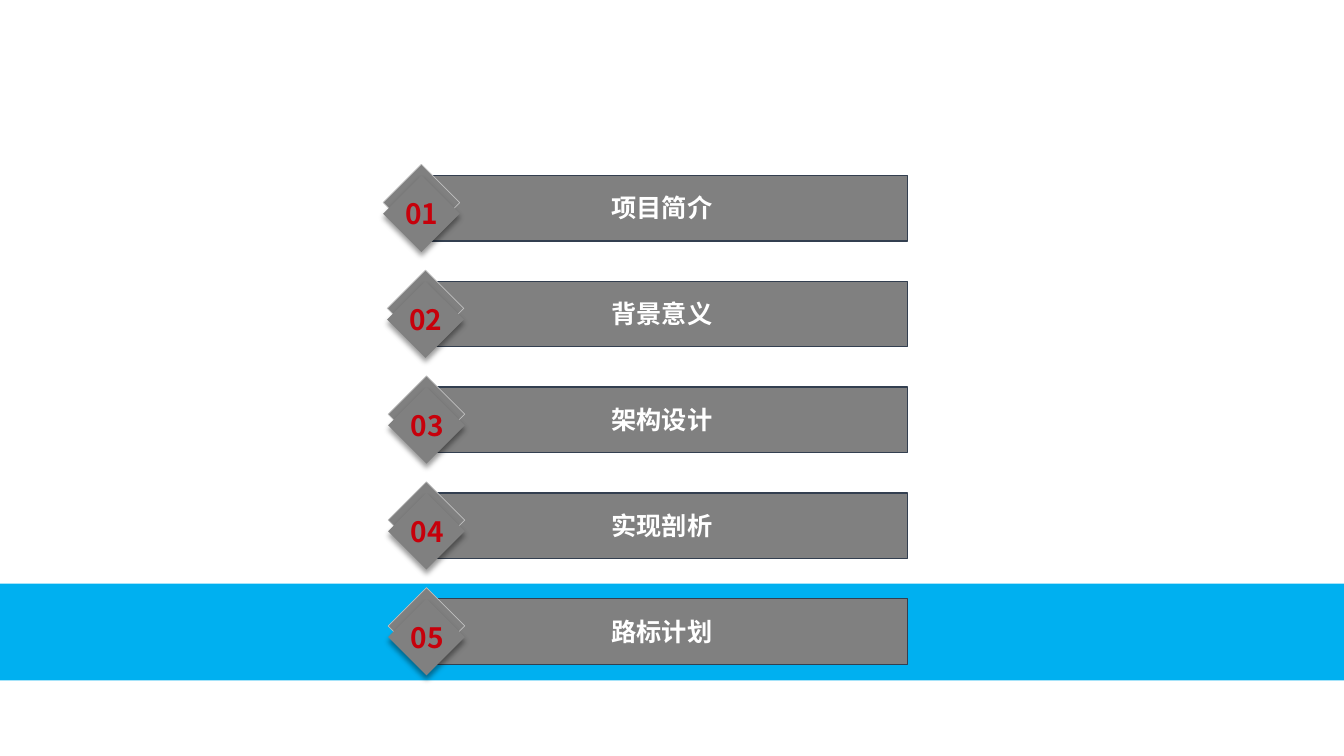
from lxml import etree
from pptx import Presentation
from pptx.dml.color import RGBColor
from pptx.enum import shapes, text
from pptx.oxml import ns
from pptx.util import Inches, Pt

FONT = "Noto Sans CJK SC"
GRAY = RGBColor(0x80, 0x80, 0x80)
LIGHT_GRAY = RGBColor(0xBF, 0xBF, 0xBF)
NAVY = RGBColor(0x33, 0x3F, 0x50)
BLUE = RGBColor(0x00, 0xB0, 0xF0)
RED = RGBColor(0xC7, 0x00, 0x0B)
WHITE = RGBColor(0xFF, 0xFF, 0xFF)
RECTANGLE = shapes.MSO_SHAPE.RECTANGLE
DIAMOND = shapes.MSO_SHAPE.FLOWCHART_DECISION

CHAPTERS = [
    # title, left edge of the diamonds
    ("项目简介", 3.80),
    ("背景意义", 3.84),
    ("架构设计", 3.85),
    ("实现剖析", 3.85),
    ("路标计划", 3.85),
]
FIRST_TOP = 1.63
ROW_PITCH = 1.05


def add_filled_shape(parent, preset, left, top, width, height,
                     fill=GRAY, line=None, line_width=1):
    shape = parent.shapes.add_shape(
        preset, Inches(left), Inches(top), Inches(width), Inches(height))
    shape.shadow.inherit = False
    shape.fill.solid()
    shape.fill.fore_color.rgb = fill
    if line is None:
        shape.line.fill.background()
    else:
        shape.line.color.rgb = line
        shape.line.width = Pt(line_width)
    return shape


def add_label(parent, wording, left, top, width, height, size, color):
    """Add a gray box with bold centred text and no margins."""
    frame = add_filled_shape(parent, RECTANGLE, left, top, width, height).text_frame
    frame.margin_left = frame.margin_right = frame.margin_top = frame.margin_bottom = 0
    frame.vertical_anchor = text.MSO_ANCHOR.MIDDLE
    frame.text = wording
    paragraph = frame.paragraphs[0]
    paragraph.alignment = text.PP_ALIGN.CENTER
    font = paragraph.runs[0].font
    font.name = FONT
    font.size = Pt(size)
    font.bold = True
    font.color.rgb = color
    properties = paragraph.runs[0]._r.get_or_add_rPr()
    etree.SubElement(properties, ns.qn("a:ea"), typeface=FONT)


presentation = Presentation()
presentation.slide_width = Inches(13.33)
presentation.slide_height = Inches(7.5)
slide = presentation.slides.add_slide(presentation.slide_layouts[6])

add_filled_shape(slide, RECTANGLE, 0, 5.79, 13.33, 0.96, fill=BLUE)

for index, (title, left) in enumerate(CHAPTERS):
    top = FIRST_TOP + index * ROW_PITCH
    row = slide.shapes.add_group_shape()

    add_filled_shape(row, RECTANGLE, 4.23, top + 0.11, 4.77, 0.65, line=NAVY)
    add_label(row, title, 5.58, top + 0.28, 1.97, 0.3, 18, WHITE)

    add_filled_shape(row, DIAMOND, left, top, 0.76, 0.76,
                     line=LIGHT_GRAY, line_width=0.5)
    front_diamond = add_filled_shape(row, DIAMOND, left, top + 0.11, 0.76, 0.76)
    effects = front_diamond._element.spPr.find(ns.qn("a:effectLst"))
    shadow = etree.SubElement(effects, ns.qn("a:outerShdw"), blurRad=str(Pt(4)),
                              dist=str(Pt(3)), dir="5400000", rotWithShape="0")
    shadow_color = etree.SubElement(shadow, ns.qn("a:srgbClr"), val="000000")
    etree.SubElement(shadow_color, ns.qn("a:alpha"), val="40000")

    add_label(row, f"{index + 1:02d}", left + 0.19, top + 0.32, 0.39, 0.34, 20, RED)

presentation.save("out.pptx")
